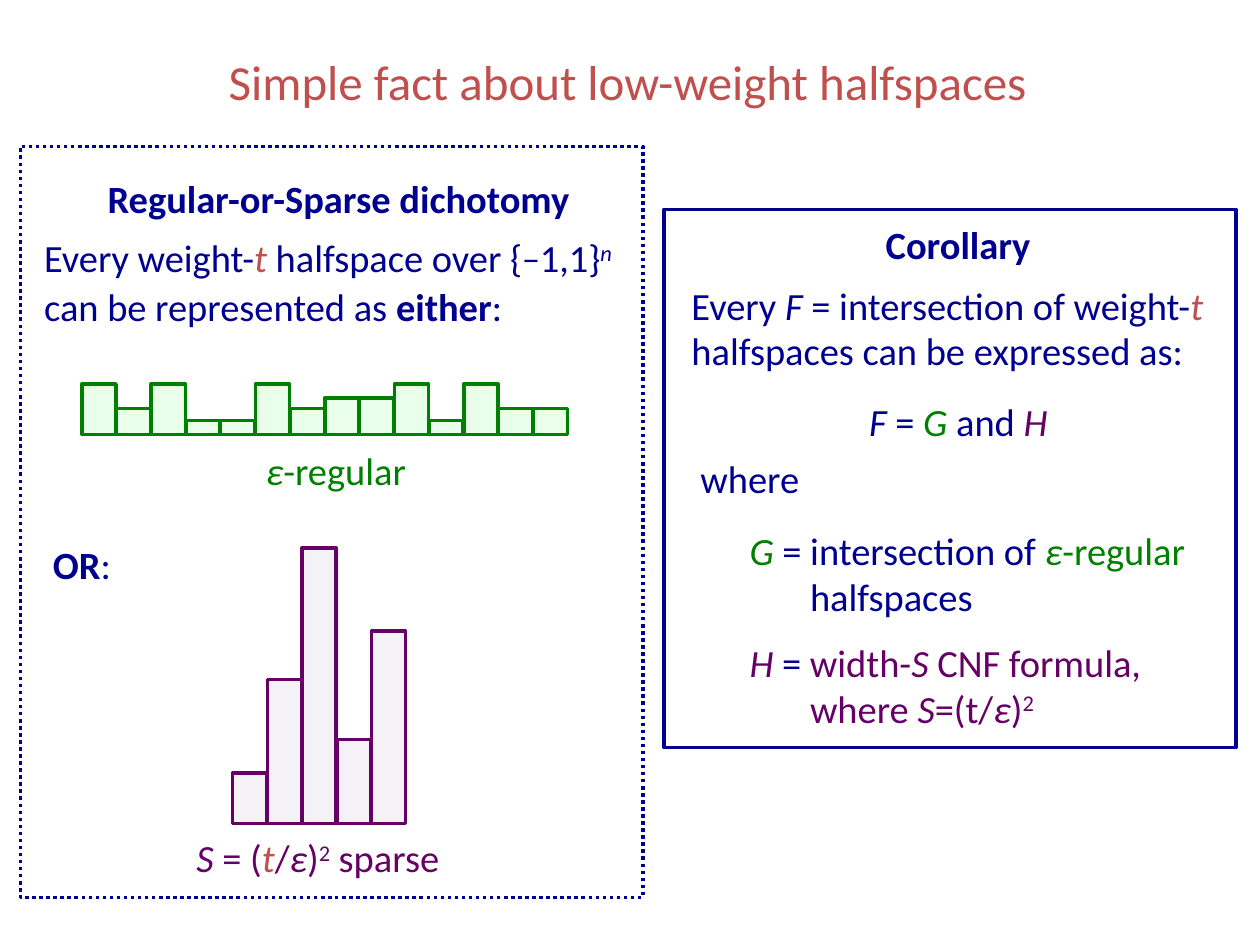
from dataclasses import dataclass

from lxml.etree import SubElement
from pptx import Presentation
from pptx.dml.color import RGBColor
from pptx.enum.dml import MSO_LINE
from pptx.enum.shapes import MSO_SHAPE
from pptx.enum.text import MSO_ANCHOR, PP_ALIGN
from pptx.oxml.ns import qn
from pptx.util import Cm, Pt


@dataclass(frozen=True)
class Theme:
    """Hold the colours, font and type sizes."""
    font: str = "Calibri"
    navy: str = "000090"
    red: str = "C0504D"
    green: str = "008000"
    mint: str = "CCFFCC"
    plum: str = "660066"
    lilac: str = "E6E0EC"
    title: int = 28
    body: int = 22
    minus: int = 20
    stroke: int = 2


LOOK = Theme()
BOLD = dict(bold=True)
SLANT = dict(italic=True)
RED = dict(color=LOOK.red, italic=True)
GREEN = dict(color=LOOK.green)
LEAF = dict(GREEN, italic=True)
PLUM = dict(color=LOOK.plum)
GRAPE = dict(PLUM, italic=True)


def put(para, text, color=LOOK.navy, size=LOOK.body, bold=False, italic=False, lift=0):
    """Add a run of text in the given format."""
    run = para.add_run()
    run.text = text
    font = run.font
    font.name, font.size = LOOK.font, Pt(size)
    font.bold, font.italic = bold, italic
    font.color.rgb = RGBColor.from_string(color)
    if lift:
        run._r.get_or_add_rPr().set("baseline", str(lift * 1000))


class Page:
    """Draw the parts of one slide in one style."""

    def __init__(self, deck, look):
        """Start a slide with a title."""
        self.look = look
        self.slide = deck.slides.add_slide(deck.slide_layouts[5])

    def title(self, text, left, top, width, height):
        """Place and fill the title."""
        head = self.slide.shapes.title
        head.left, head.top = Cm(left), Cm(top)
        head.width, head.height = Cm(width), Cm(height)
        head.text_frame.vertical_anchor = MSO_ANCHOR.MIDDLE
        para = head.text_frame.paragraphs[0]
        para.alignment, para.line_spacing = PP_ALIGN.CENTER, Pt(38.6)
        put(para, text, color=self.look.red, size=self.look.title)

    def rect(self, left, top, width, height, line, fill=None, dash=None):
        """Draw a box with an outline and a sheer or empty fill."""
        box = self.slide.shapes.add_shape(
            MSO_SHAPE.RECTANGLE, Cm(left), Cm(top), Cm(width), Cm(height))
        box.shadow.inherit = False
        if fill:
            box.fill.solid()
            box.fill.fore_color.rgb = RGBColor.from_string(fill)
            tint = box.element.spPr.find(f"{qn('a:solidFill')}/{qn('a:srgbClr')}")
            SubElement(tint, qn("a:alpha"), val="40000")
        else:
            box.fill.background()
        box.line.color.rgb = RGBColor.from_string(line)
        box.line.width = Pt(self.look.stroke)
        if dash:
            box.line.dash_style = dash

    def bars(self, left, base, tall, line, fill, step=0.7):
        """Draw a row of bars that stand on one base line."""
        for spot, height in enumerate(tall):
            self.rect(left + spot * step, base - height, step - 0.01, height, line, fill)

    def box(self, left, top, width, height, inset=0):
        """Add an empty text box and return its frame."""
        frame = self.slide.shapes.add_textbox(
            Cm(left), Cm(top), Cm(width), Cm(height)).text_frame
        frame.word_wrap = True
        frame.margin_top = Cm(inset)
        return frame

    def line(self, frame, *runs, lead=None, after=0, mid=False, hang=0):
        """Write one paragraph of runs into a frame."""
        para = frame.paragraphs[-1]
        if para.runs:
            para = frame.add_paragraph()
        para.alignment = PP_ALIGN.CENTER if mid else PP_ALIGN.LEFT
        para.space_after = Pt(after)
        if lead:
            para.line_spacing = Pt(lead)
        if hang:
            props = para._p.get_or_add_pPr()
            props.set("marL", str(Cm(hang)))
            props.set("indent", str(-Cm(hang)))
        for index, (text, style) in enumerate(runs):
            for part, piece in enumerate(text.split("\n")):
                if part:
                    para.add_line_break()
                put(para, piece, **style)


def left_side(page):
    """Build the dichotomy panel."""
    page.rect(0.41, 2.95, 12.55, 15.14, LOOK.navy, dash=MSO_LINE.ROUND_DOT)
    frame = page.box(0.64, 3.4, 12.37, 2.74)
    page.line(frame, ("Regular-or-Sparse dichotomy", BOLD), lead=30, after=6, mid=True)
    page.line(frame, ("Every weight-", {}), ("t", RED), (" halfspace over {", {}),
              ("−", dict(size=LOOK.minus)), ("1,1}", {}), ("n ", dict(SLANT, lift=30)),
              ("can be represented as ", {}), ("either", BOLD), (":", {}), lead=28)
    page.line(page.box(5.11, 8.89, 3.4, 1.85), ("ε", LEAF), ("-regular", GREEN), lead=30)
    high, mid, half, low = 1.02, 0.74, 0.52, 0.28
    page.bars(1.65, 8.76, [high, half, high, low, low, high, half, mid, mid,
                           high, low, high, half, half], LOOK.green, LOOK.mint)
    page.line(page.box(-0.05, 10.77, 3.4, 1.45), ("OR", BOLD), (":", {}), lead=30, mid=True)
    page.line(page.box(3.71, 16.69, 5.66, 1.85), ("S", GRAPE), (" = (", PLUM), ("t", RED),
              ("/", PLUM), ("ε", GRAPE), (")", PLUM), ("2", dict(PLUM, lift=30)),
              (" sparse", PLUM), lead=30)
    page.bars(4.69, 16.6, [1.02, 2.9, 5.55, 1.69, 3.88], LOOK.plum, LOOK.lilac)


def right_side(page):
    """Build the corollary panel."""
    frame = page.box(13.69, 4.32, 11.25, 3.96)
    page.line(frame, ("Corollary", BOLD), lead=30, after=9, mid=True)
    page.line(frame, ("Every ", {}), ("F", SLANT), (" = intersection of weight-", {}),
              ("t", RED), (" halfspaces can be expressed as:", {}), lead=26)
    page.line(page.box(17.27, 7.9, 4.42, 1.19, 0.13), ("F", SLANT), (" = ", {}),
              ("G", LEAF), (" and ", {}), ("H", GRAPE))
    page.line(page.box(13.87, 9.19, 3.1, 1.37), ("where", {}), lead=26)
    page.line(page.box(14.86, 10.49, 9.7, 2.13, 0.13), ("G ", LEAF),
              ("= intersection of ", {}), ("ε", LEAF), ("-regular", GREEN),
              ("\nhalfspaces", {}), hang=1.22)
    page.line(page.box(14.86, 12.75, 9.7, 2.13, 0.13), ("H ", GRAPE), ("= ", {}),
              ("width-", PLUM), ("S ", GRAPE), ("CNF formula,\nwhere ", PLUM),
              ("S", GRAPE), ("=(t/", PLUM), ("ε", GRAPE), (")", PLUM),
              ("2", dict(PLUM, lift=30)), hang=1.22)
    page.rect(13.39, 4.22, 11.53, 10.85, LOOK.navy)


def main():
    """Build and save the deck."""
    deck = Presentation()
    deck.slide_width, deck.slide_height = Cm(25.4), Cm(19.05)
    page = Page(deck, LOOK)
    page.title("Simple fact about low-weight halfspaces", 0, -0.66, 25.3, 4.39)
    left_side(page)
    right_side(page)
    deck.save("out.pptx")


if __name__ == "__main__":
    main()
